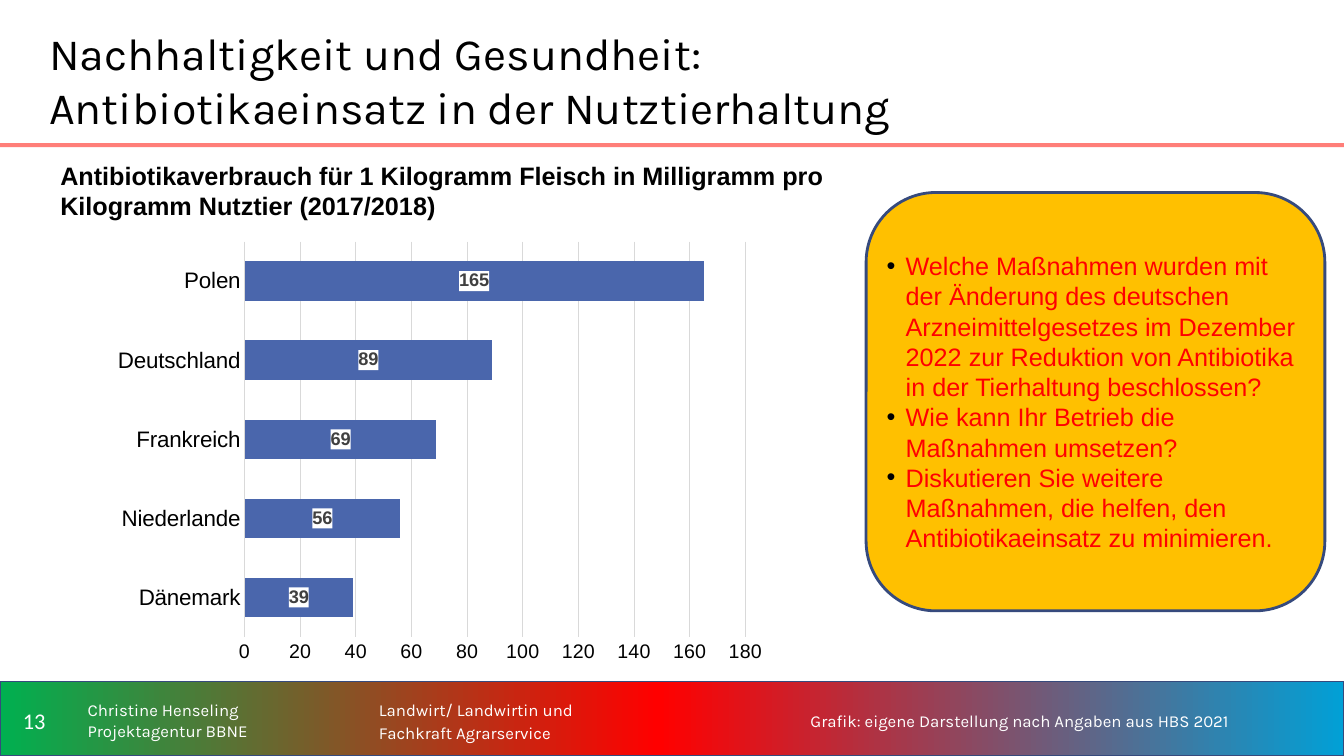
from copy import deepcopy

from lxml.etree import SubElement
from pptx import Presentation
from pptx.chart.data import CategoryChartData
from pptx.dml.color import RGBColor
from pptx.enum.chart import XL_CHART_TYPE, XL_LABEL_POSITION, XL_TICK_MARK
from pptx.enum.shapes import MSO_SHAPE
from pptx.enum.text import MSO_ANCHOR, PP_ALIGN
from pptx.oxml import parse_xml
from pptx.oxml.ns import nsdecls, qn
from pptx.util import Inches, Pt

BLACK = RGBColor(0, 0, 0)
WHITE = RGBColor(255, 255, 255)
RED = RGBColor(255, 0, 0)
GREEN = RGBColor(0x00, 0xB0, 0x50)
CYAN = RGBColor(0x01, 0xA0, 0xD6)
CORAL = RGBColor(0xFF, 0x7E, 0x79)
AMBER = RGBColor(0xFF, 0xC0, 0x00)
NAVY = RGBColor(0x36, 0x4A, 0x7D)
BAR_BLUE = RGBColor(0x4A, 0x66, 0xAC)
GRID_GREY = RGBColor(0xD9, 0xD9, 0xD9)
LABEL_GREY = RGBColor(0x40, 0x40, 0x40)

TITLE = ["Nachhaltigkeit und Gesundheit:\vAntibiotikaeinsatz in der Nutztierhaltung"]
CHART_HEADING = ["Antibiotikaverbrauch für 1 Kilogramm Fleisch in Milligramm pro "
                 "Kilogramm Nutztier (2017/2018)"]
CONSUMPTION = {"Dänemark": 39, "Niederlande": 56, "Frankreich": 69,
               "Deutschland": 89, "Polen": 165}
QUESTIONS = [
    "Welche Maßnahmen wurden mit der Änderung des deutschen Arzneimittelgesetzes "
    "im Dezember 2022 zur Reduktion von Antibiotika in der Tierhaltung beschlossen?",
    "Wie kann Ihr Betrieb die Maßnahmen umsetzen?",
    "Diskutieren Sie weitere Maßnahmen, die helfen, den Antibiotikaeinsatz zu minimieren.",
]
# left, width, lines, paragraph format, font changes
FOOTER = [
    (0, 0.68, ["13"], {"alignment": PP_ALIGN.CENTER}, {"size": Pt(16), "name": "Calibri"}),
    (0.77, 2.78, ["Christine Henseling", "Projektagentur BBNE"], {}, {}),
    (3.66, 4.19, ["Landwirt/ Landwirtin und", "Fachkraft Agrarservice"],
     {"line_spacing": 1.1}, {}),
    (7.94, 5.05, ["Grafik: eigene Darstellung nach Angaben aus HBS 2021"],
     {"line_spacing": 1.1}, {}),
]
SLIDE_WIDTH, SLIDE_HEIGHT = 13.33, 7.5
FOOTER_TOP = 6.76
GRADIENT = [(0, GREEN), (0.49, RED), (1, CYAN)]
PLOT_SHARES = {"x": 0.208, "y": 0.02, "w": 0.746, "h": 0.9}


def set_font(font, color, **values):
    font.color.rgb = color
    for name, value in values.items():
        setattr(font, name, value)


def add_panel(slide, kind, box, color=None, line_width=None):
    shape = slide.shapes.add_shape(kind, *map(Inches, box))
    shape.shadow.inherit = False
    if color is not None:
        shape.fill.solid()
        shape.fill.fore_color.rgb = color
    if line_width:
        shape.line.color.rgb = NAVY
        shape.line.width = Pt(line_width)
    else:
        shape.line.fill.background()
    return shape


def write_lines(frame, lines, color, layout=None, bullet=False, **font):
    frame.word_wrap = True
    for index, line in enumerate(lines):
        paragraph = frame.paragraphs[0] if index == 0 else frame.add_paragraph()
        paragraph.text = line
        for name, value in {"alignment": PP_ALIGN.LEFT, **(layout or {})}.items():
            setattr(paragraph, name, value)
        if bullet:
            properties = paragraph._p.get_or_add_pPr()
            properties.set("marL", str(Inches(0.19)))
            properties.set("indent", str(-Inches(0.19)))
            bullet_color = SubElement(properties, qn("a:buClr"))
            SubElement(bullet_color, qn("a:srgbClr")).set("val", str(BLACK))
            SubElement(properties, qn("a:buFont")).set("typeface", "Arial")
            SubElement(properties, qn("a:buChar")).set("char", "•")
        for run in paragraph.runs:
            set_font(run.font, color, **font)


def add_text(slide, box, lines, color, anchor=MSO_ANCHOR.MIDDLE, layout=None, **font):
    frame = slide.shapes.add_textbox(*map(Inches, box)).text_frame
    frame.vertical_anchor = anchor
    write_lines(frame, lines, color, layout, **font)


def add_footer(slide):
    band = add_panel(slide, MSO_SHAPE.RECTANGLE,
                     (0, FOOTER_TOP, SLIDE_WIDTH, SLIDE_HEIGHT - FOOTER_TOP), line_width=1)
    band.fill.gradient()
    band.fill.gradient_angle = 0
    stop_list = band._element.spPr.find(qn("a:gradFill")).find(qn("a:gsLst"))
    stop_list.append(deepcopy(stop_list[0]))
    for stop, (position, color) in zip(band.fill.gradient_stops, GRADIENT):
        stop.position = position
        stop.color.rgb = color
    for left, width, lines, layout, changes in FOOTER:
        add_text(slide, (left, FOOTER_TOP + 0.08, width, 0.61), lines, WHITE,
                 layout=layout, **{"size": Pt(12), "name": "Karla", **changes})


def add_consumption_chart(slide):
    data = CategoryChartData()
    data.categories = list(CONSUMPTION)
    data.add_series("Series 1", list(CONSUMPTION.values()))
    chart = slide.shapes.add_chart(XL_CHART_TYPE.BAR_CLUSTERED,
                                   *map(Inches, (1.04, 2.31, 6.66, 4.36)), data).chart
    chart.has_legend = chart.has_title = False
    set_font(chart.font, BLACK, size=Pt(10), name="Arial")

    for axis, size in ((chart.category_axis, 16), (chart.value_axis, 14)):
        axis.major_tick_mark = axis.minor_tick_mark = XL_TICK_MARK.NONE
        set_font(axis.tick_labels.font, BLACK, size=Pt(size), name="Arial")
    values = chart.value_axis
    values.minimum_scale, values.maximum_scale, values.major_unit = 0, 180, 20
    values.format.line.fill.background()
    for line in (chart.category_axis.format.line, values.major_gridlines.format.line):
        line.color.rgb = GRID_GREY
        line.width = Pt(0.75)

    plot = chart.plots[0]
    plot.gap_width = 100
    plot.vary_by_categories = False
    series = plot.series[0]
    series.format.fill.solid()
    series.format.fill.fore_color.rgb = BAR_BLUE
    labels = series.data_labels
    labels.show_value = True
    labels.position = XL_LABEL_POSITION.CENTER
    set_font(labels.font, LABEL_GREY, size=Pt(13), name="Arial", bold=True)
    labels._element.find(qn("c:txPr")).addprevious(parse_xml(
        f'<c:spPr {nsdecls("c", "a")}><a:solidFill><a:srgbClr val="{WHITE}"/>'
        '</a:solidFill></c:spPr>'))

    plot_area = chart._chartSpace.chart.plotArea
    for layout in plot_area.findall(qn("c:layout")):
        plot_area.remove(layout)
    layout = parse_xml(f'<c:layout {nsdecls("c")}/>')
    manual = SubElement(layout, qn("c:manualLayout"))
    settings = {"layoutTarget": "inner", "xMode": "edge", "yMode": "edge", **PLOT_SHARES}
    for name, value in settings.items():
        SubElement(manual, qn(f"c:{name}")).set("val", str(value))
    plot_area.insert(0, layout)


def add_questions(slide):
    panel = add_panel(slide, MSO_SHAPE.ROUNDED_RECTANGLE, (8.59, 1.91, 4.55, 4.15), AMBER, 2)
    frame = panel.text_frame
    for side in ("left", "top", "right", "bottom"):
        setattr(frame, f"margin_{side}", 0)
    frame.vertical_anchor = MSO_ANCHOR.MIDDLE
    write_lines(frame, QUESTIONS, RED, bullet=True, size=Pt(18), name="Arial")


def main():
    presentation = Presentation()
    presentation.slide_width = Inches(SLIDE_WIDTH)
    presentation.slide_height = Inches(SLIDE_HEIGHT)
    slide = presentation.slides.add_slide(presentation.slide_layouts[6])
    add_footer(slide)
    add_panel(slide, MSO_SHAPE.RECTANGLE, (0, 1.42, SLIDE_WIDTH, 0.04), CORAL)
    add_text(slide, (0.39, 0.2, 9.84, 1.18), TITLE, BLACK, size=Pt(32), name="Karla")
    add_questions(slide)
    add_consumption_chart(slide)
    add_text(slide, (0.5, 1.54, 8.4, 0.71), CHART_HEADING, BLACK, MSO_ANCHOR.TOP,
             size=Pt(18), name="Arial", bold=True)
    presentation.save("out.pptx")


if __name__ == "__main__":
    main()
